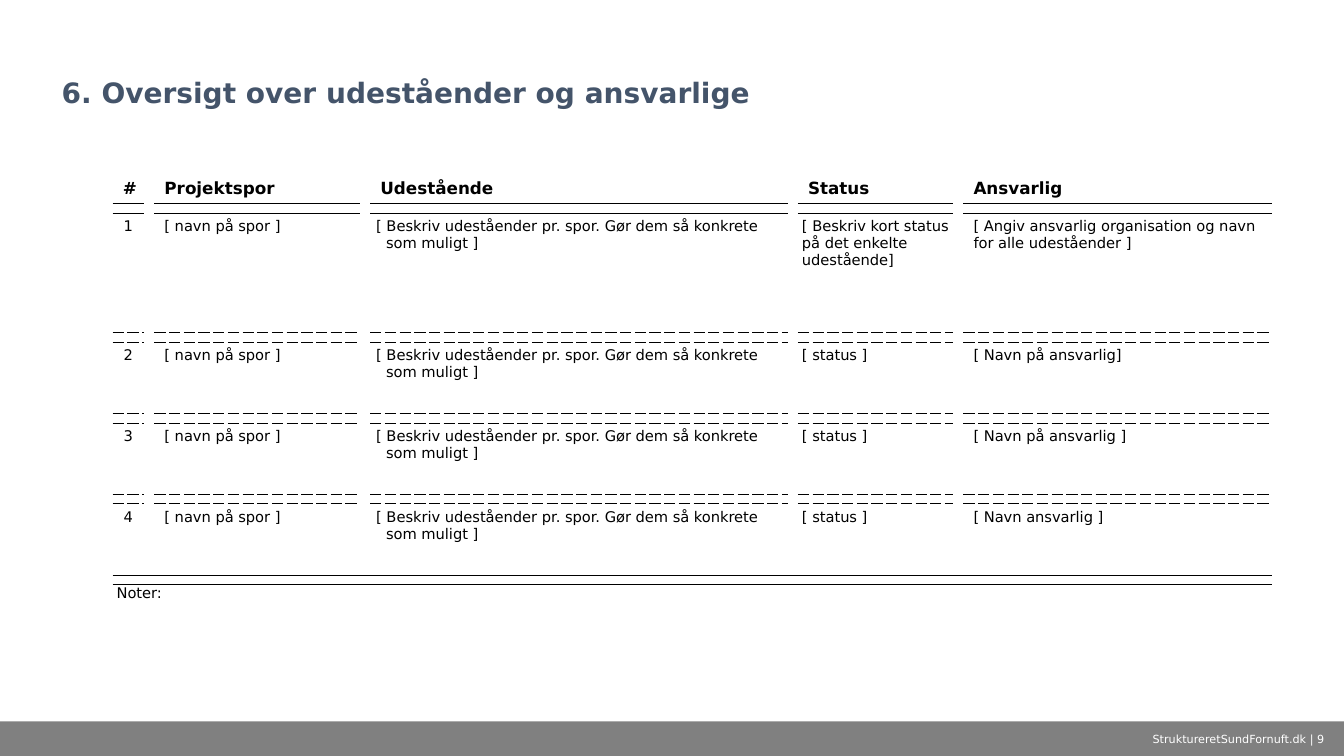
from lxml.etree import SubElement
from pptx import Presentation
from pptx.dml.color import RGBColor
from pptx.enum.shapes import MSO_SHAPE
from pptx.enum.text import MSO_ANCHOR, MSO_AUTO_SIZE, PP_ALIGN
from pptx.oxml.ns import qn
from pptx.util import Cm, Pt

FONT = "DejaVu Sans"
BLACK = "000000"
NO_STYLE = "{2D5ABB26-0587-4C30-8999-92F81FD0307C}"
GAP, RULE, ITEM = 0.26, 0.23, 1.58
COLUMN_WIDTHS = [0.79, GAP, 5.18, GAP, 10.52, GAP, 3.91, GAP, 7.77]
ROW_HEIGHTS = [1.07, RULE, 2.79] + [RULE, RULE, ITEM] * 3 + [RULE, RULE, ITEM]
HEADINGS = ["#", "Projektspor", "Udestående", "Status", "Ansvarlig"]
TRACK = "[ navn på spor ]"
ISSUE = "[ Beskriv udeståender pr. spor. Gør dem så konkrete som muligt ]"
ITEMS = [
    ("[ Beskriv kort status på det enkelte udestående]",
     "[ Angiv ansvarlig organisation og navn for alle udeståender ]"),
    ("[ status ]", "[ Navn på ansvarlig]"),
    ("[ status ]", "[ Navn på ansvarlig ]"),
    ("[ status ]", "[ Navn ansvarlig ]"),
]
HEADING_FORMAT = {"name": FONT, "size": Pt(12), "bold": True}
ITEM_FORMAT = {"name": FONT, "size": Pt(10.5), "bold": False}
ISSUE_MARGINS = (0.15, 0.13, 0, 0)
STATUS_MARGINS = (0.1, 0.13, 0, 0)
NOTE_MARGINS = (0.1, 0, 0.1, 0)


def set_attributes(target, values):
    """Set every attribute in a dict of format values."""
    for name, value in values.items():
        setattr(target, name, value)


def color(hex_value):
    """Turn a hex string into a colour."""
    return RGBColor.from_string(hex_value)


def write(paragraph, text, values, hex_value):
    """Add one formatted run to a paragraph."""
    run = paragraph.add_run()
    run.text = text
    set_attributes(run.font, values)
    run.font.color.rgb = color(hex_value)


def set_margins(target, margins):
    """Set left, top, right and bottom margins in centimetres."""
    names = ("margin_left", "margin_top", "margin_right", "margin_bottom")
    set_attributes(target, dict(zip(names, map(Cm, margins))))


def fill_cell(cell, text, values, margins=None, hanging=0, alignment=None):
    """Write text into a table cell."""
    if margins:
        set_margins(cell, margins)
    paragraph = cell.text_frame.paragraphs[0]
    paragraph.alignment = alignment
    if hanging:
        properties = paragraph._p.get_or_add_pPr()
        properties.set("marL", str(Cm(hanging)))
        properties.set("indent", str(-Cm(hanging)))
    write(paragraph, text, values, BLACK)


def add_border(cell, side, dash):
    """Draw a thin border on one side of a cell."""
    line = SubElement(cell._tc.get_or_add_tcPr(), qn(f"a:{side}"), w=str(Pt(0.25)))
    fill = SubElement(line, qn("a:solidFill"))
    SubElement(fill, qn("a:srgbClr"), val=BLACK)
    SubElement(line, qn("a:prstDash"), val=dash)


def draw_rule(table, upper_row, columns, dash):
    """Draw a rule on both sides of the edge below a row."""
    for column in columns:
        add_border(table.cell(upper_row, column), "lnB", dash)
        add_border(table.cell(upper_row + 1, column), "lnT", dash)


def draw_double_rules(table):
    """Draw the paired rules that separate the table's sections."""
    text_columns = range(0, 9, 2)
    draw_rule(table, 0, text_columns, "solid")
    for column in text_columns:
        add_border(table.cell(1, column), "lnB", "solid")
        add_border(table.cell(2, column), "lnT", "solid")
    for row in (3, 6, 9):
        for column in text_columns:
            add_border(table.cell(row, column), "lnB", "dash")
            add_border(table.cell(row + 1, column), "lnT", "dash")


def add_title(slide, left, top, width, height):
    """Place the slide title."""
    title = slide.shapes.title
    set_attributes(title, {"left": left, "top": top, "width": width, "height": height})
    set_attributes(title.text_frame, {
        "vertical_anchor": MSO_ANCHOR.BOTTOM, "word_wrap": True,
        "auto_size": MSO_AUTO_SIZE.NONE})
    paragraph = title.text_frame.paragraphs[0]
    set_attributes(paragraph, {"alignment": PP_ALIGN.LEFT, "line_spacing": 0.9})
    write(paragraph, "6. Oversigt over udeståender og ansvarlige",
          {"name": FONT, "size": Pt(20), "bold": True}, "44546A")


def add_overview(slide, left, top, width, height):
    """Place the table of outstanding issues."""
    table = slide.shapes.add_table(
        len(ROW_HEIGHTS), len(COLUMN_WIDTHS), left, top, width, height).table
    set_attributes(table, {"first_row": False, "horz_banding": False})
    table._tbl.tblPr.find(qn("a:tableStyleId")).text = NO_STYLE
    for column, column_width in zip(table.columns, COLUMN_WIDTHS):
        column.width = Cm(column_width)
    for row, row_height in zip(table.rows, ROW_HEIGHTS):
        row.height = Cm(row_height)

    for index, heading in enumerate(HEADINGS):
        cell = table.cell(0, 2 * index)
        cell.vertical_anchor = MSO_ANCHOR.BOTTOM
        fill_cell(cell, heading, HEADING_FORMAT)
    for index, (status, owner) in enumerate(ITEMS):
        cells = table.rows[2 + 3 * index].cells
        fill_cell(cells[0], str(index + 1), ITEM_FORMAT, alignment=PP_ALIGN.CENTER)
        fill_cell(cells[2], TRACK, ITEM_FORMAT)
        fill_cell(cells[4], ISSUE, ITEM_FORMAT, ISSUE_MARGINS, 0.25)
        fill_cell(cells[6], status, ITEM_FORMAT, STATUS_MARGINS)
        fill_cell(cells[8], owner, ITEM_FORMAT)
    for row in (13, 14):
        table.cell(row, 0).merge(table.cell(row, 8))
    fill_cell(table.cell(14, 0), "Noter:", ITEM_FORMAT, NOTE_MARGINS, 1)

    text_columns = range(0, 9, 2)
    draw_rule(table, 0, text_columns, "solid")
    for row in (3, 6, 9):
        draw_rule(table, row, text_columns, "dash")
    draw_rule(table, 12, range(9), "solid")
    for cell in table.iter_cells():
        cell.fill.background()
        if not cell.text:
            set_margins(cell, (0, 0, 0, 0))
            SubElement(cell.text_frame.paragraphs[0]._p, qn("a:endParaRPr"), sz="100")


def add_footer(slide, left, top, width, height):
    """Place the footer bar with the address and page number."""
    bar = slide.shapes.add_shape(MSO_SHAPE.RECTANGLE, left, top, width, height)
    bar.shadow.inherit = False
    bar.fill.solid()
    bar.fill.fore_color.rgb = color("808080")
    bar.line.fill.background()
    label_width = Cm(5.31)
    label = slide.shapes.add_textbox(
        left + width - label_width, top, label_width, height)
    set_attributes(label.text_frame, {
        "word_wrap": True, "vertical_anchor": MSO_ANCHOR.MIDDLE})
    paragraph = label.text_frame.paragraphs[0]
    paragraph.alignment = PP_ALIGN.CENTER
    write(paragraph, "StruktureretSundFornuft.dk | 9",
          {"name": FONT, "size": Pt(8)}, "FFFFFF")


def main():
    """Build and save the presentation."""
    presentation = Presentation()
    set_attributes(presentation, {"slide_width": Cm(33.87), "slide_height": Cm(19.05)})
    slide = presentation.slides.add_slide(presentation.slide_layouts[5])
    add_footer(slide, 0, Cm(18.18), presentation.slide_width, Cm(0.87))
    add_title(slide, Cm(1.3), Cm(0.43), Cm(31.27), Cm(2.46))
    add_overview(slide, Cm(2.84), Cm(4.06), Cm(29.21), Cm(12.24))
    presentation.save("out.pptx")


if __name__ == "__main__":
    main()
